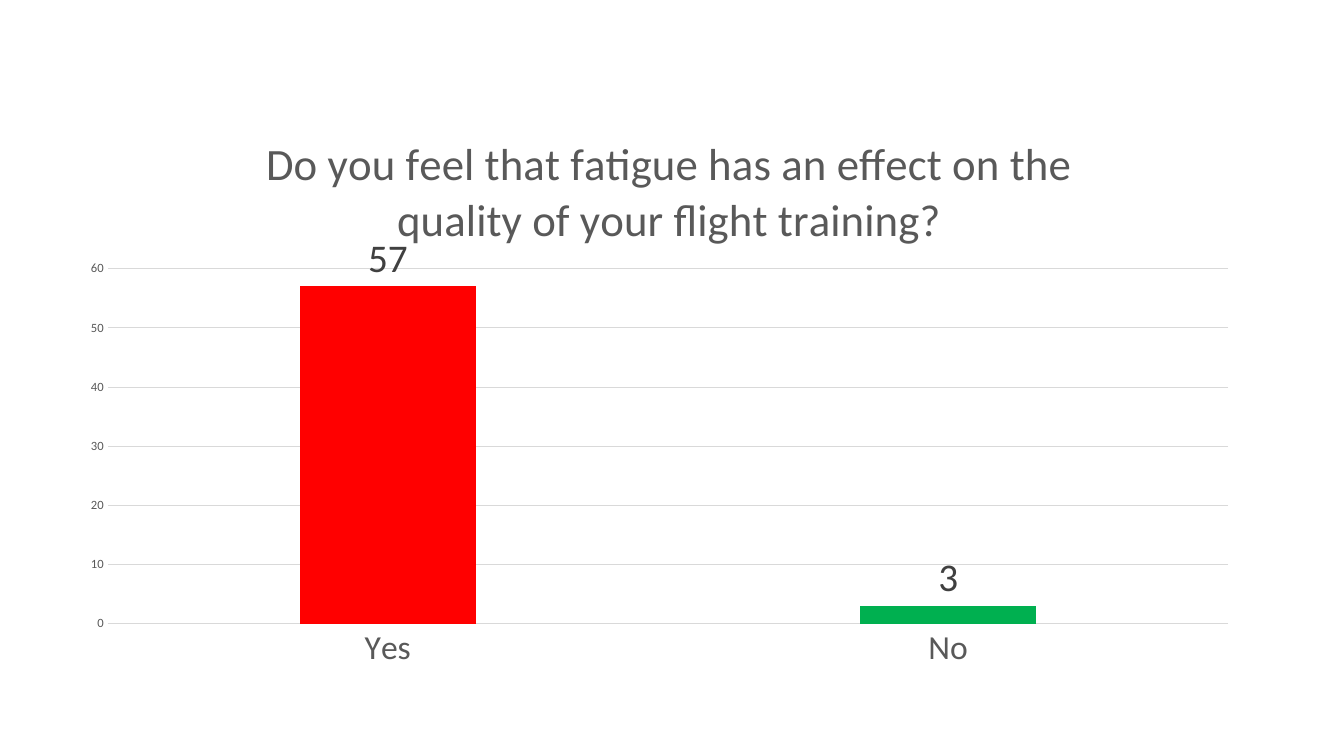
from lxml import etree
from pptx import Presentation
from pptx import util as u
from pptx.chart import data
from pptx.dml import color
from pptx.enum import chart as charts

CHART_NS = "http://schemas.openxmlformats.org/drawingml/2006/chart"
QUESTION = "Do you feel that fatigue has an effect on the quality of your flight training?"
ANSWERS = {"Yes": (57, "FF0000"), "No": (3, "00B050")}
GREY, LABEL_GREY, RULE_GREY = "595959", "404040", "D9D9D9"


def rgb(value):
    return color.RGBColor.from_string(value)


def set_attributes(target, values):
    for name, value in values.items():
        setattr(target, name, value)


def format_font(font, size, hex_color):
    set_attributes(font, {"name": "Calibri", "size": u.Pt(size), "bold": False})
    font.color.rgb = rgb(hex_color)


def format_line(line):
    line.width = u.Pt(0.75)
    line.color.rgb = rgb(RULE_GREY)


def place_chart_part(chart, tag, index, layout):
    """Give the title or plot area a manual layout in fractions of the chart."""
    part = chart.element.find(f".//{{{CHART_NS}}}{tag}")
    for old_layout in part.findall(f"{{{CHART_NS}}}layout"):
        part.remove(old_layout)
    element = etree.Element(f"{{{CHART_NS}}}layout")
    manual = etree.SubElement(element, f"{{{CHART_NS}}}manualLayout")
    for name, value in layout.items():
        etree.SubElement(manual, f"{{{CHART_NS}}}{name}", val=str(value))
    part.insert(index, element)


def add_answer_chart(slide):
    chart_data = data.CategoryChartData()
    chart_data.categories = list(ANSWERS)
    chart_data.add_series("Series 1", [count for count, _ in ANSWERS.values()])
    frame = slide.shapes.add_chart(
        charts.XL_CHART_TYPE.COLUMN_CLUSTERED,
        u.Cm(1.73), u.Cm(2.39), u.Cm(29.82), u.Cm(14.76), chart_data)
    chart = frame.chart
    chart.has_legend = False
    format_font(chart.font, 10, "000000")
    return chart


def format_title(chart):
    chart.has_title = True
    chart.chart_title.include_in_layout = False
    paragraph = chart.chart_title.text_frame.paragraphs[0]
    run = paragraph.add_run()
    run.text = QUESTION
    format_font(run.font, 32, GREY)
    place_chart_part(chart, "title", 1, {
        "xMode": "edge", "yMode": "edge", "x": 0.16, "y": 0.05})


def format_columns(chart):
    plot = chart.plots[0]
    set_attributes(plot, {"gap_width": 219, "overlap": -27,
                          "vary_by_categories": False, "has_data_labels": True})
    set_attributes(plot.data_labels, {
        "show_value": True, "position": charts.XL_LABEL_POSITION.OUTSIDE_END})
    format_font(plot.data_labels.font, 28, LABEL_GREY)
    series = plot.series[0]
    series.format.fill.solid()
    series.format.fill.fore_color.rgb = rgb("5B9BD5")
    for index, (_, hex_color) in enumerate(ANSWERS.values()):
        fill = series.points[index].format.fill
        fill.solid()
        fill.fore_color.rgb = rgb(hex_color)
    place_chart_part(chart, "plotArea", 0, {
        "layoutTarget": "inner", "xMode": "edge", "yMode": "edge",
        "x": 0.033, "y": 0.297, "w": 0.947, "h": 0.606})


def format_axes(chart):
    for axis, size in ((chart.category_axis, 24), (chart.value_axis, 9)):
        set_attributes(axis, {"major_tick_mark": charts.XL_TICK_MARK.NONE,
                              "minor_tick_mark": charts.XL_TICK_MARK.NONE})
        format_font(axis.tick_labels.font, size, GREY)
    format_line(chart.category_axis.format.line)
    set_attributes(chart.value_axis, {
        "minimum_scale": 0, "maximum_scale": 60, "major_unit": 10,
        "has_major_gridlines": True})
    format_line(chart.value_axis.major_gridlines.format.line)
    chart.value_axis.format.line.fill.background()


def main():
    presentation = Presentation()
    set_attributes(presentation, {"slide_width": u.Cm(33.87),
                                  "slide_height": u.Cm(19.05)})
    slide = presentation.slides.add_slide(presentation.slide_layouts[6])
    chart = add_answer_chart(slide)
    format_title(chart)
    format_columns(chart)
    format_axes(chart)
    presentation.save("out.pptx")


if __name__ == "__main__":
    main()
